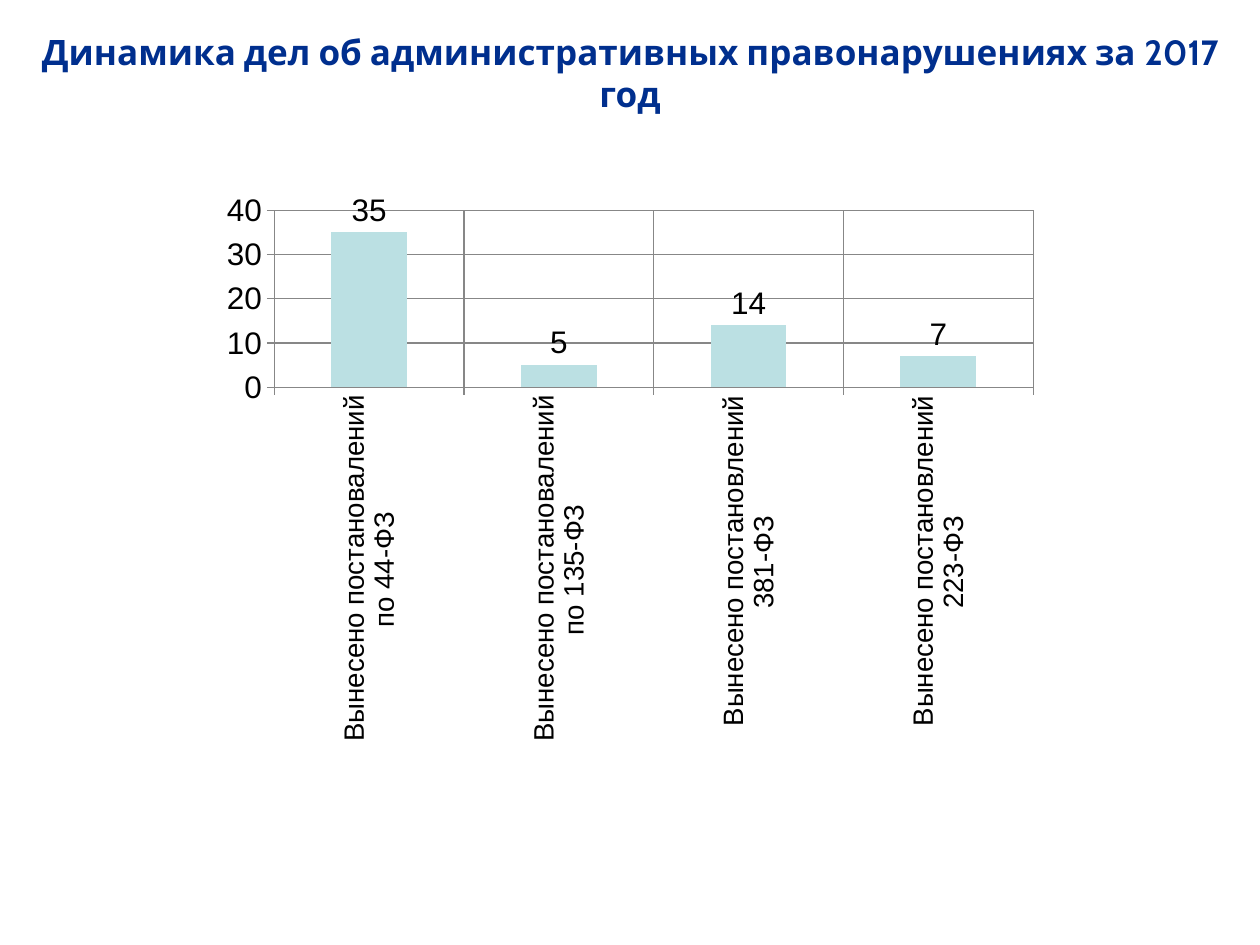
"""Build a slide with a column chart of administrative cases in 2017."""
from pptx import Presentation
from pptx.chart.data import CategoryChartData
from pptx.dml.color import RGBColor
from pptx.enum.chart import XL_CHART_TYPE, XL_LABEL_POSITION, XL_TICK_MARK
from pptx.enum.text import MSO_AUTO_SIZE, PP_ALIGN
from pptx.oxml.ns import qn
from pptx.util import Pt

COLUMNS = XL_CHART_TYPE.COLUMN_CLUSTERED
OUTSIDE_END = XL_LABEL_POSITION.OUTSIDE_END
TICK_OUT = XL_TICK_MARK.OUTSIDE
CENTER = PP_ALIGN.CENTER
GROW = MSO_AUTO_SIZE.SHAPE_TO_FIT_TEXT

NAVY = RGBColor(0x00, 0x2F, 0x8E)
PALE_TEAL = RGBColor(0xBB, 0xE0, 0xE3)
GRAY = RGBColor(0x87, 0x87, 0x87)
BLACK = RGBColor(0x00, 0x00, 0x00)

TITLE = "Динамика дел об административных правонарушениях за 2017 год"
CASES = {
    "Вынесено постановалений по 44-ФЗ": 35,
    "Вынесено постановалений по 135-ФЗ": 5,
    "Вынесено постановлений 381-ФЗ": 14,
    "Вынесено постановлений 223-ФЗ": 7,
}
UPWARD = "-5400000"


def style_font(font, name, size, color):
    font.name, font.size = name, Pt(size)
    font.color.rgb = color


def add_title(slide):
    box = slide.shapes.add_textbox(Pt(0), Pt(14), Pt(720), Pt(31.5))
    frame = box.text_frame
    frame.word_wrap = True
    frame.auto_size = GROW
    paragraph = frame.paragraphs[0]
    paragraph.text = TITLE
    paragraph.alignment = CENTER
    style_font(paragraph.font, "Cabin", 20, NAVY)
    paragraph.font.bold = True


def style_axis(axis, size):
    axis.major_tick_mark = TICK_OUT
    axis.has_major_gridlines = True
    for line in (axis.format.line, axis.major_gridlines.format.line):
        line.color.rgb = GRAY
        line.width = Pt(0.75)
    style_font(axis.tick_labels.font, "Arial", size, BLACK)


def add_cases_chart(slide):
    data = CategoryChartData()
    data.categories = list(CASES)
    data.add_series("Series 1", list(CASES.values()))
    chart = slide.shapes.add_chart(
        COLUMNS, Pt(120), Pt(110), Pt(480), Pt(320), data).chart
    chart.has_title = chart.has_legend = False
    style_font(chart.font, "Arial", 18, BLACK)

    plot = chart.plots[0]
    plot.gap_width = 150
    plot.vary_by_categories = False
    fill = plot.series[0].format.fill
    fill.solid()
    fill.fore_color.rgb = PALE_TEAL
    plot.has_data_labels = True
    labels = plot.data_labels
    labels.show_value = True
    labels.position = OUTSIDE_END
    style_font(labels.font, "Arial", 18, BLACK)

    style_axis(chart.category_axis, 16)
    style_axis(chart.value_axis, 18)
    chart.value_axis.minimum_scale = 0
    chart.value_axis.maximum_scale = 40
    chart.value_axis.major_unit = 10
    label_body = chart.category_axis._element.find(f"{qn('c:txPr')}/{qn('a:bodyPr')}")
    label_body.set("rot", UPWARD)
    label_body.set("vert", "horz")


def main():
    presentation = Presentation()
    presentation.slide_width, presentation.slide_height = Pt(720), Pt(540)
    slide = presentation.slides.add_slide(presentation.slide_layouts[6])
    add_title(slide)
    add_cases_chart(slide)
    presentation.save("out.pptx")


if __name__ == "__main__":
    main()
